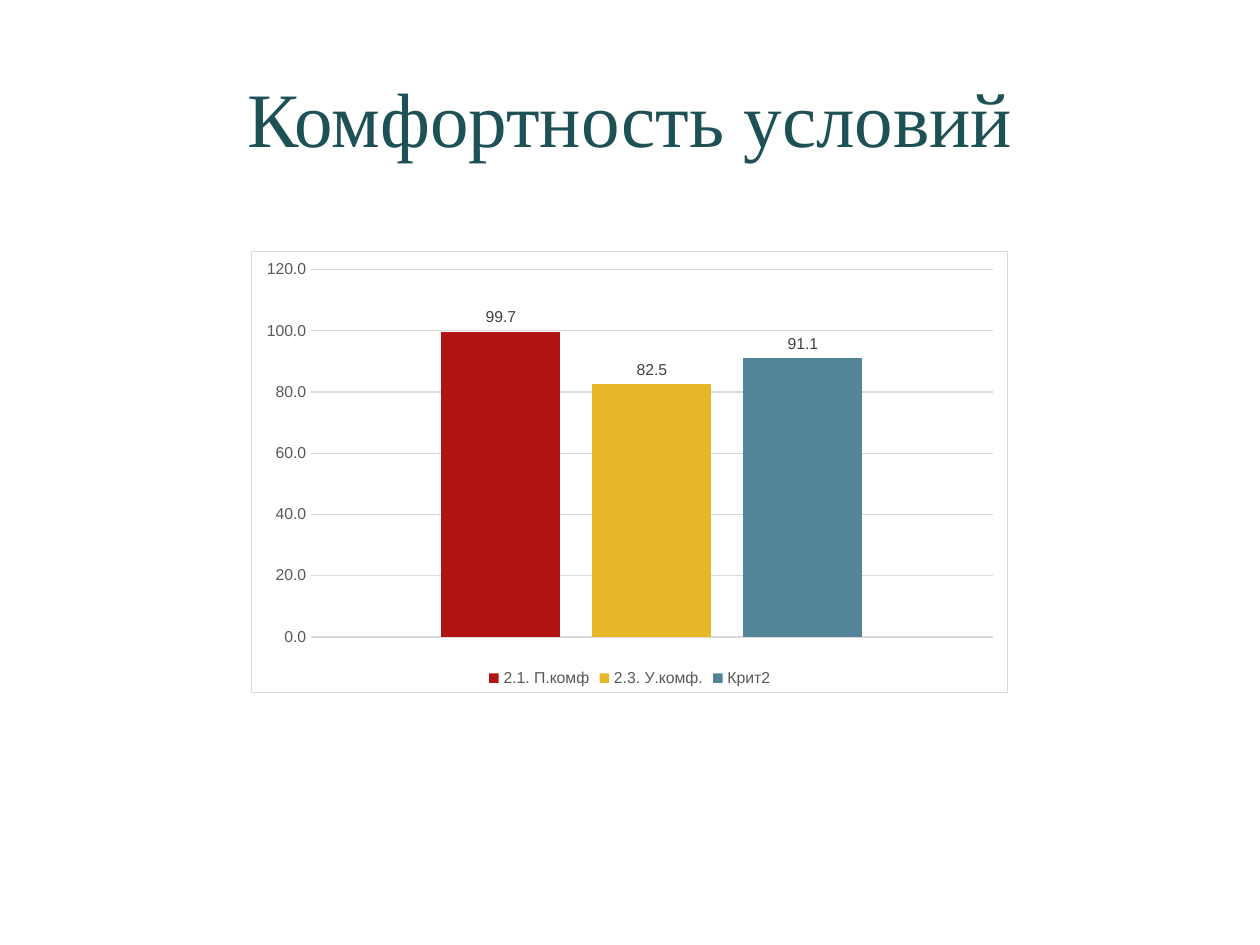
from dataclasses import dataclass

from lxml import etree
from pptx import Presentation
from pptx.chart.chart import Chart
from pptx.chart.data import CategoryChartData
from pptx.chart.series import BarSeries
from pptx.dml.color import RGBColor
from pptx.enum.chart import XL_CHART_TYPE, XL_LABEL_POSITION, XL_LEGEND_POSITION, XL_TICK_MARK
from pptx.enum.text import MSO_ANCHOR, PP_ALIGN
from pptx.oxml import parse_xml
from pptx.oxml.ns import nsdecls, qn
from pptx.slide import Slide
from pptx.text.text import Font
from pptx.util import Cm, Pt

COLUMNS = XL_CHART_TYPE.COLUMN_CLUSTERED
OUTSIDE_END = XL_LABEL_POSITION.OUTSIDE_END
BOTTOM = XL_LEGEND_POSITION.BOTTOM
NO_TICK = XL_TICK_MARK.NONE
MIDDLE = MSO_ANCHOR.MIDDLE
CENTER = PP_ALIGN.CENTER
SCORE_FORMAT = "0.0"


@dataclass(frozen=True)
class Theme:
    title_font: str = "Times New Roman"
    chart_font: str = "Arial"
    title_size: float = 44
    chart_size: float = 10
    label_size: float = 9
    rule_width: float = 0.75
    title: str = "1E5155"
    text: str = "000000"
    axis: str = "595959"
    label: str = "404040"
    rule: str = "D9D9D9"


@dataclass(frozen=True)
class Criterion:
    name: str
    score: float
    color: str


THEME = Theme()
CRITERIA = [
    Criterion("2.1. П.комф", 99.7, "B01513"),
    Criterion("2.3. У.комф.", 82.5, "E6B729"),
    Criterion("Крит2", 91.1, "54849A"),
]


def style_font(font: Font, name: str, size: float, color: str) -> None:
    font.name = name
    font.size = Pt(size)
    font.color.rgb = RGBColor.from_string(color)


def add_title(slide: Slide, wording: str) -> None:
    title = slide.shapes.title
    title.left, title.top, title.width, title.height = Cm(1.27), Cm(0.76), Cm(22.86), Cm(3.18)
    title.text_frame.text = wording
    title.text_frame.vertical_anchor = MIDDLE
    heading = title.text_frame.paragraphs[0]
    heading.alignment = CENTER
    style_font(heading.font, THEME.title_font, THEME.title_size, THEME.title)


def add_border(chart: Chart) -> None:
    border = parse_xml(f"<c:spPr {nsdecls('c', 'a')}/>")
    line = etree.SubElement(border, qn("a:ln"), w=str(Pt(THEME.rule_width)))
    fill = etree.SubElement(line, qn("a:solidFill"))
    etree.SubElement(fill, qn("a:srgbClr"), val=THEME.rule)
    chart.element.find(qn("c:chart")).addnext(border)


def style_series(series: BarSeries, criterion: Criterion) -> None:
    series.format.fill.solid()
    series.format.fill.fore_color.rgb = RGBColor.from_string(criterion.color)
    labels = series.data_labels
    labels.show_value = True
    labels.position = OUTSIDE_END
    labels.number_format = SCORE_FORMAT
    labels.number_format_is_linked = False
    style_font(labels.font, THEME.chart_font, THEME.label_size, THEME.label)


def style_axes(chart: Chart) -> None:
    chart.category_axis.visible = False
    scores = chart.value_axis
    scores.minimum_scale, scores.maximum_scale, scores.major_unit = 0, 120, 20
    scores.major_tick_mark = scores.minor_tick_mark = NO_TICK
    scores.format.line.fill.background()
    scores.tick_labels.number_format = SCORE_FORMAT
    scores.tick_labels.number_format_is_linked = False
    style_font(scores.tick_labels.font, THEME.chart_font, THEME.label_size, THEME.axis)
    grid = scores.major_gridlines.format.line
    grid.width = Pt(THEME.rule_width)
    grid.color.rgb = RGBColor.from_string(THEME.rule)


def add_scores_chart(slide: Slide, criteria: list[Criterion]) -> None:
    scores = CategoryChartData(number_format=SCORE_FORMAT)
    scores.categories = ["1"]
    for criterion in criteria:
        scores.add_series(criterion.name, [criterion.score])
    chart = slide.shapes.add_chart(COLUMNS, Cm(5.06), Cm(5.06), Cm(15.27), Cm(8.91), scores).chart
    chart.has_title = False
    style_font(chart.font, THEME.chart_font, THEME.chart_size, THEME.text)
    add_border(chart)
    style_axes(chart)
    chart.has_legend = True
    chart.legend.position = BOTTOM
    chart.legend.include_in_layout = False
    style_font(chart.legend.font, THEME.chart_font, THEME.label_size, THEME.axis)
    plot = chart.plots[0]
    plot.gap_width = 219
    plot.overlap = -27
    plot.vary_by_categories = False
    for series, criterion in zip(plot.series, criteria):
        style_series(series, criterion)


def main() -> None:
    deck = Presentation()
    deck.slide_width, deck.slide_height = Cm(25.4), Cm(19.05)
    slide = deck.slides.add_slide(deck.slide_layouts[5])
    add_title(slide, "Комфортность условий")
    add_scores_chart(slide, CRITERIA)
    deck.save("out.pptx")


if __name__ == "__main__":
    main()
